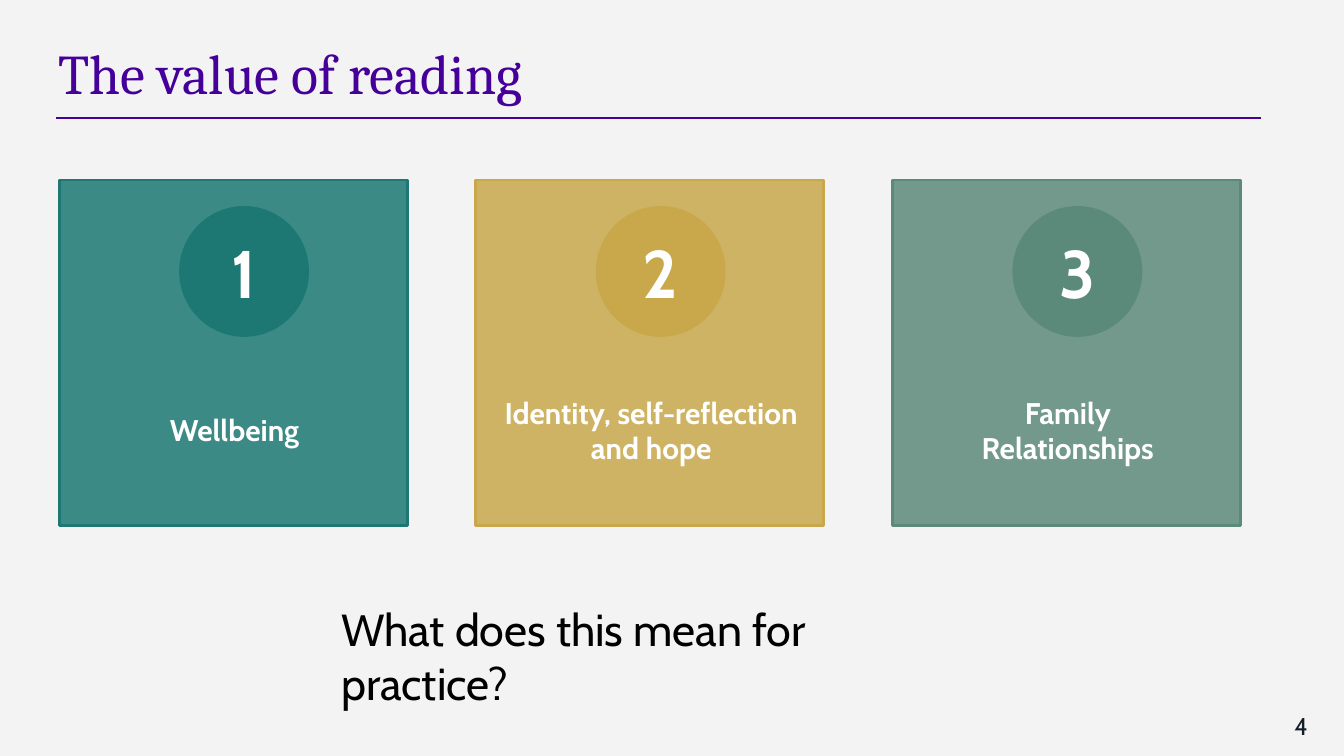
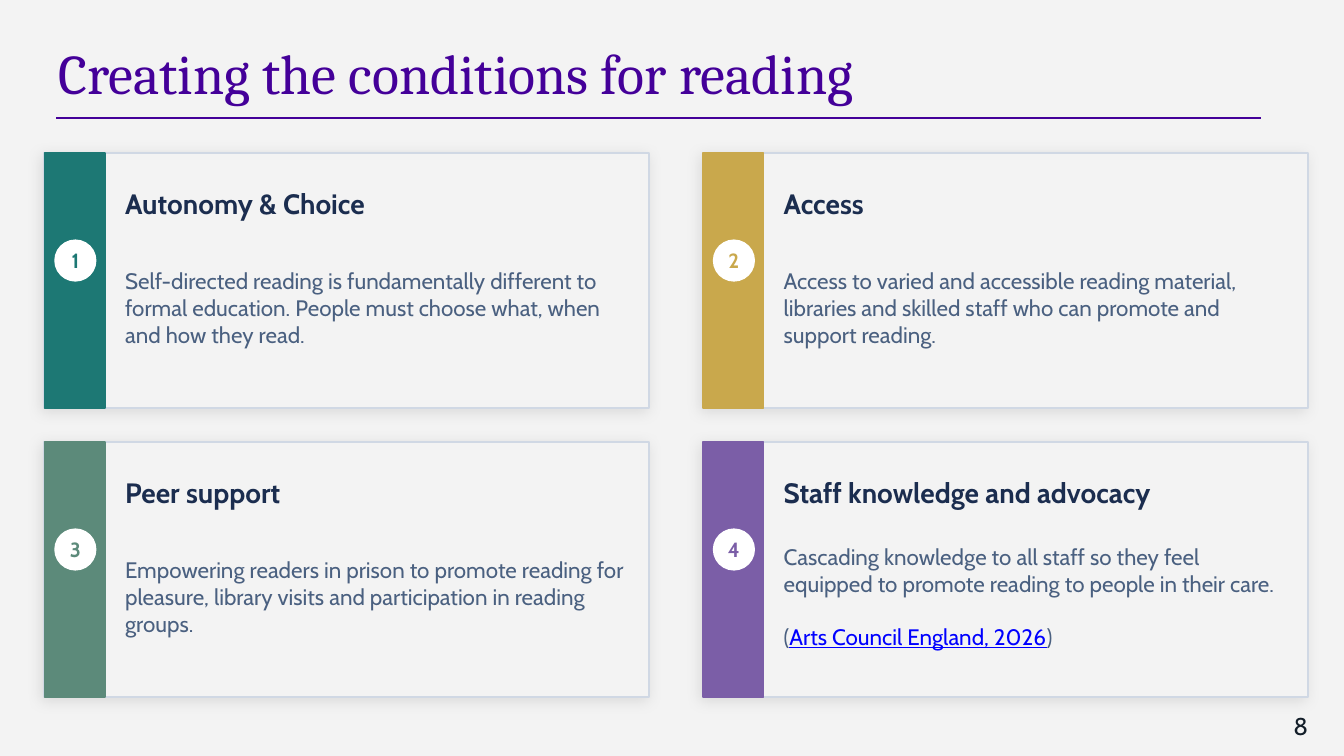
from dataclasses import dataclass

from lxml.etree import SubElement
from pptx import Presentation
from pptx.dml.color import RGBColor
from pptx.enum.shapes import MSO_CONNECTOR, MSO_SHAPE
from pptx.enum.text import MSO_ANCHOR, MSO_AUTO_SIZE, PP_ALIGN
from pptx.oxml.ns import qn
from pptx.presentation import Presentation as Deck
from pptx.shapes.autoshape import Shape
from pptx.slide import Slide
from pptx.text.text import TextFrame
from pptx.util import Pt

# Shared look
PAPER = RGBColor(0xF3, 0xF3, 0xF3)
WHITE = RGBColor(0xFF, 0xFF, 0xFF)
BLACK = RGBColor(0x00, 0x00, 0x00)
VIOLET = RGBColor(0x44, 0x00, 0x99)
INK = RGBColor(0x13, 0x1E, 0x29)
NAVY = RGBColor(0x1B, 0x2D, 0x4F)
SLATE = RGBColor(0x4A, 0x60, 0x80)
MIST = RGBColor(0xD0, 0xD8, 0xE4)
LINK_BLUE = RGBColor(0x00, 0x00, 0xFF)
TEAL = RGBColor(0x1D, 0x78, 0x74)
GOLD = RGBColor(0xC9, 0xA8, 0x4C)
SAGE = RGBColor(0x5C, 0x8A, 0x7A)
PURPLE = RGBColor(0x7B, 0x5E, 0xA7)
TITLE_FONT = "Cambria"
BODY_FONT = "Cabin"


@dataclass(frozen=True)
class Area:
    left: float
    top: float
    width: float
    height: float

    def inside(self, dx: float, dy: float, width: float, height: float) -> "Area":
        return Area(self.left + dx, self.top + dy, width, height)

    def lengths(self) -> tuple[Pt, Pt, Pt, Pt]:
        return Pt(self.left), Pt(self.top), Pt(self.width), Pt(self.height)


@dataclass(frozen=True)
class Style:
    size: float
    color: RGBColor
    bold: bool = False
    font: str = BODY_FONT
    align: PP_ALIGN = PP_ALIGN.LEFT
    anchor: MSO_ANCHOR = MSO_ANCHOR.MIDDLE
    inset: float = 0
    gap: float = 0


@dataclass(frozen=True)
class Span:
    text: str
    color: RGBColor | None = None
    underline: bool = False


Para = tuple[Span, ...]


@dataclass(frozen=True)
class Tile:
    color: RGBColor
    label: tuple[Para, ...]


@dataclass(frozen=True)
class Card:
    color: RGBColor
    heading: str
    body: tuple[Para, ...]


TITLE = Style(30, VIOLET, font=TITLE_FONT, anchor=MSO_ANCHOR.TOP, inset=7.2)
PAGE_NUMBER = Style(13, INK, align=PP_ALIGN.RIGHT, anchor=MSO_ANCHOR.TOP, inset=7.2)
TILE_LABEL = Style(16, WHITE, bold=True, align=PP_ALIGN.CENTER)
TILE_NUMBER = Style(36, WHITE, bold=True, align=PP_ALIGN.CENTER)
QUESTION = Style(24, BLACK, anchor=MSO_ANCHOR.TOP, inset=7.2)
CARD_HEADING = Style(15, NAVY, bold=True)
CARD_BODY = Style(12, SLATE, gap=14)

TILES = (
    Tile(TEAL, ((Span("Wellbeing"),),)),
    Tile(GOLD, ((Span("Identity, self-reflection and hope"),),)),
    Tile(SAGE, ((Span("Family"),), (Span("Relationships"),))),
)

CARDS = (
    Card(TEAL, "Autonomy & Choice", ((Span(
        "Self-directed reading is fundamentally different to formal education. "
        "People must choose what, when and how they read."),),)),
    Card(GOLD, "Access", ((Span(
        "Access to varied and accessible reading material, libraries and "
        "skilled staff who can promote and support reading."),),)),
    Card(SAGE, "Peer support", ((Span(
        "Empowering readers in prison to promote reading for pleasure, "
        "library visits and participation in reading groups."),),)),
    Card(PURPLE, "Staff knowledge and advocacy", (
        (Span("Cascading knowledge to all staff so they feel equipped to "
              "promote reading to people in their care."),),
        (Span("("), Span("Arts Council England, 2026", LINK_BLUE, True), Span(")")),
    )),
)


def write(frame: TextFrame, paras: tuple[Para, ...], style: Style, wrap: bool = True) -> None:
    frame.word_wrap = wrap
    frame.auto_size = MSO_AUTO_SIZE.NONE
    frame.vertical_anchor = style.anchor
    frame.margin_left = frame.margin_right = Pt(style.inset)
    frame.margin_top = frame.margin_bottom = Pt(style.inset)
    for index, spans in enumerate(paras):
        para = frame.add_paragraph() if index else frame.paragraphs[0]
        para.alignment = style.align
        para.space_before = Pt(style.gap if index else 0)
        for span in spans:
            run = para.add_run()
            run.text = span.text
            run.font.name = style.font
            run.font.size = Pt(style.size)
            run.font.bold = style.bold
            run.font.color.rgb = span.color or style.color
            if span.underline:
                run.font.underline = True


def add_text(page: Slide, area: Area, paras: tuple[Para, ...], style: Style) -> Shape:
    box = page.shapes.add_textbox(*area.lengths())
    write(box.text_frame, paras, style)
    return box


def add_block(page: Slide, kind: MSO_SHAPE, area: Area, fill: RGBColor,
              line: RGBColor, weight: float = 1) -> Shape:
    shape = page.shapes.add_shape(kind, *area.lengths())
    shape.shadow.inherit = False
    shape.fill.solid()
    shape.fill.fore_color.rgb = fill
    shape.line.color.rgb = line
    shape.line.width = Pt(weight)
    return shape


def add_badge(page: Slide, area: Area, fill: RGBColor, number: int, style: Style) -> None:
    badge = add_block(page, MSO_SHAPE.OVAL, area, fill, fill)
    write(badge.text_frame, ((Span(str(number)),),), style, wrap=False)


def set_opacity(shape: Shape, percent: int) -> None:
    color = shape._element.spPr.find(qn("a:solidFill")).find(qn("a:srgbClr"))
    SubElement(color, qn("a:alpha"), val=str(percent * 1000))


def add_soft_shadow(shape: Shape) -> None:
    effects = shape._element.spPr.find(qn("a:effectLst"))
    shadow = SubElement(effects, qn("a:outerShdw"), blurRad=str(Pt(8)), dist=str(Pt(2)),
                        dir=str(135 * 60000), algn="bl", rotWithShape="0")
    color = SubElement(shadow, qn("a:srgbClr"), val="000000")
    SubElement(color, qn("a:alpha"), val="9000")


def add_page(deck: Deck, title: str, number: int) -> Slide:
    page = deck.slides.add_slide(deck.slide_layouts.get_by_name("Title Only"))
    # Rule under the title
    rule = page.shapes.add_connector(
        MSO_CONNECTOR.STRAIGHT, Pt(30.2), Pt(63.2), Pt(675.4), Pt(63.2))
    rule.line.color.rgb = VIOLET
    rule.line.width = Pt(0.75)
    SubElement(rule._element.spPr, qn("a:effectLst"))
    # Title and page number
    heading = page.shapes.title
    heading.left, heading.top, heading.width, heading.height = Area(24, 13.7, 630, 58.3).lengths()
    write(heading.text_frame, ((Span(title),),), TITLE)
    add_text(page, Area(664.6, 373.7, 43.2, 31), ((Span(str(number)),),), PAGE_NUMBER)
    return page


def add_tile(page: Slide, tile: Tile, index: int) -> None:
    area = Area(31.7 + 223.2 * index, 96.5, 186.5, 185)
    panel = add_block(page, MSO_SHAPE.RECTANGLE, area, tile.color, tile.color, 1.5)
    set_opacity(panel, 85)
    add_badge(page, area.inside(64.8, 14.4, 68.6, 69.1), tile.color, index + 1, TILE_NUMBER)
    add_text(page, area.inside(7.2, 100.8, 173.5, 66.2), tile.label, TILE_LABEL)


def add_card(page: Slide, card: Card, index: int) -> None:
    row, column = divmod(index, 2)
    area = Area(23.8 + 352.8 * column, 82 + 154.8 * row, 324, 136.8)
    panel = add_block(page, MSO_SHAPE.RECTANGLE, area, PAPER, MIST)
    add_soft_shadow(panel)
    band = area.inside(0, 0, 32.4, area.height)
    add_block(page, MSO_SHAPE.RECTANGLE, band, card.color, card.color)
    number_style = Style(11, card.color, bold=True, align=PP_ALIGN.CENTER)
    add_badge(page, area.inside(5.8, 46.8, 21.6, 21.6), WHITE, index + 1, number_style)
    add_text(page, area.inside(43.2, 10.8, 270, 32.4), ((Span(card.heading),),), CARD_HEADING)
    add_text(page, area.inside(43.2, 43.2, 270, 79.2), card.body, CARD_BODY)


def main() -> None:
    deck = Presentation()
    deck.slide_width, deck.slide_height = Pt(720), Pt(405)
    background = deck.slide_master.background.fill
    background.solid()
    background.fore_color.rgb = PAPER

    # Value of reading: three tiles and a question
    page = add_page(deck, "The value of reading", 4)
    for index, tile in enumerate(TILES):
        add_tile(page, tile, index)
    question = add_text(page, Area(175.7, 319, 357, 36),
                        ((Span("What does this mean for practice?"),),), QUESTION)
    question.text_frame.margin_top = question.text_frame.margin_bottom = Pt(3.6)
    question.text_frame.auto_size = MSO_AUTO_SIZE.SHAPE_TO_FIT_TEXT

    # Conditions for reading: two by two cards
    page = add_page(deck, "Creating the conditions for reading", 8)
    for index, card in enumerate(CARDS):
        add_card(page, card, index)

    deck.save("out.pptx")


if __name__ == "__main__":
    main()
